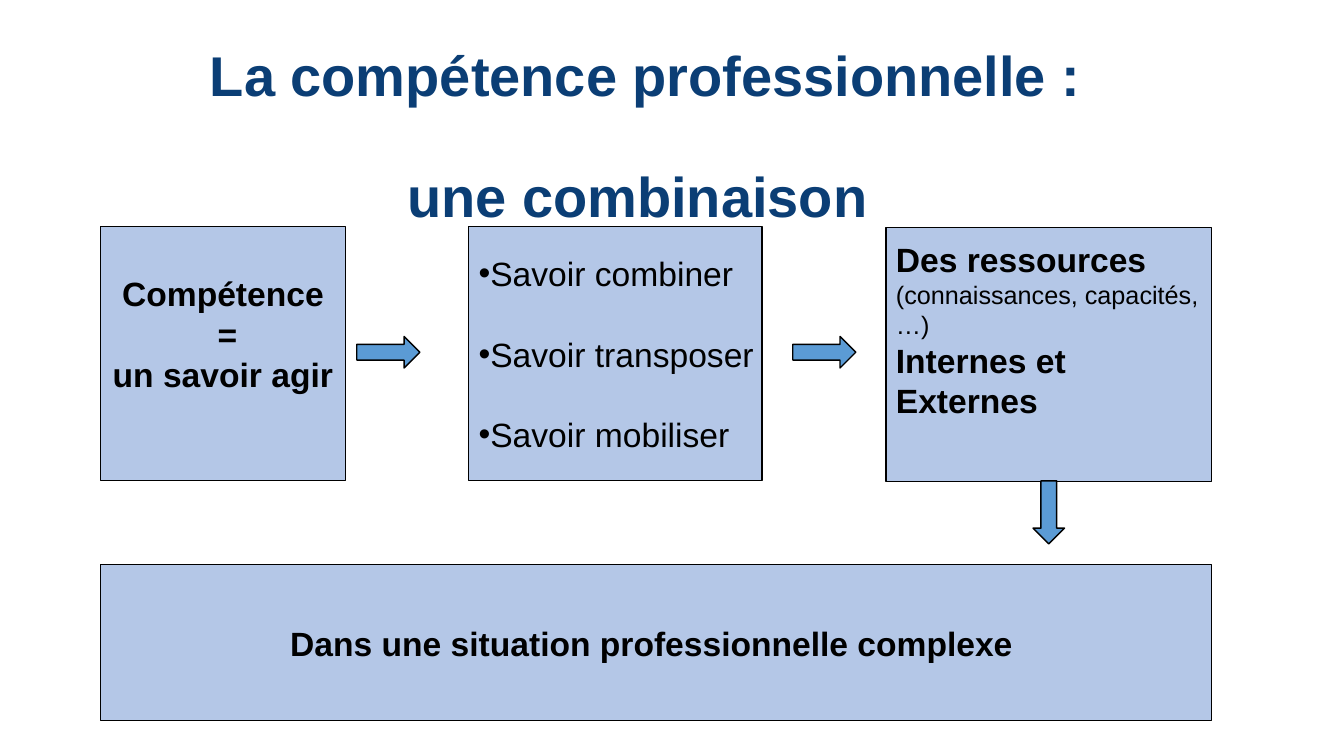
"""Build a slide on professional competence as a combination of skills and resources."""
from lxml import etree
from pptx import Presentation
from pptx.dml.color import RGBColor
from pptx.enum.shapes import MSO_SHAPE
from pptx.enum.text import MSO_ANCHOR, MSO_AUTO_SIZE, PP_ALIGN
from pptx.oxml.ns import qn
from pptx.util import Pt

RECTANGLE, ARROW = MSO_SHAPE.RECTANGLE, MSO_SHAPE.RIGHT_ARROW
TOP, MIDDLE = MSO_ANCHOR.TOP, MSO_ANCHOR.MIDDLE
LEFT, CENTER = PP_ALIGN.LEFT, PP_ALIGN.CENTER

FONT = "Arial"
NAVY, BLACK, PALE_BLUE, BLUE = "0B3E75", "000000", "B4C7E7", "5B9BD5"

TITLE = [("La compétence professionnelle :", 40, True), ("une combinaison ", 40, True)]
COMPETENCE = [("Compétence", 24, True), (" =", 24, True), ("un savoir agir", 24, True)]
SKILLS = [("Savoir combiner", 24, False), ("Savoir transposer", 24, False),
          ("Savoir mobiliser", 24, False)]
RESOURCES = [("Des ressources", 24, True), ("(connaissances, capacités,", 18, False),
             ("…)", 18, False), ("Internes et", 24, True), ("Externes", 24, True)]
SITUATION = [("Dans une situation professionnelle complexe ", 24, True)]

ROW_TOP, ROW_HEIGHT = 162, 181.5
MARGIN, RIGHT_EDGE = 72, 865.4
RESOURCES_LEFT = 632.9
RESOURCES_WIDTH = RIGHT_EDGE - RESOURCES_LEFT
ARROW_LENGTH, ARROW_WIDTH = 45, 22.5
LINE_24 = 28.7


def color(value):
    return RGBColor.from_string(value)


def write(frame, lines, align, ink=BLACK, gap=0, bullet=None):
    frame.text = "\n".join(text for text, _, _ in lines)
    for index, (paragraph, (_, size, bold)) in enumerate(zip(frame.paragraphs, lines)):
        if bullet:
            properties = paragraph._p.get_or_add_pPr()
            properties.set("marL", "0")
            properties.set("indent", "0")
            etree.SubElement(properties, qn("a:buFont")).set("typeface", FONT)
            etree.SubElement(properties, qn("a:buChar")).set("char", bullet)
        paragraph.alignment = align
        if index and gap:
            paragraph.space_before = Pt(gap)
        for run in paragraph.runs:
            run.font.name = FONT
            run.font.size = Pt(size)
            run.font.bold = bold
            run.font.color.rgb = color(ink)


def add_figure(slide, kind, left, top, width, height, fill, line_width):
    figure = slide.shapes.add_shape(kind, Pt(left), Pt(top), Pt(width), Pt(height))
    figure.shadow.inherit = False
    figure.fill.solid()
    figure.fill.fore_color.rgb = color(fill)
    figure.line.color.rgb = color(BLACK)
    figure.line.width = Pt(line_width)
    return figure


def add_box(slide, left, top, width, height, lines, align,
            anchor=MIDDLE, inset_top=3.6, inset_bottom=3.6, gap=0, bullet=None):
    box = add_figure(slide, RECTANGLE, left, top, width, height, PALE_BLUE, 0.75)
    frame = box.text_frame
    frame.word_wrap = False
    frame.vertical_anchor = anchor
    frame.margin_top, frame.margin_bottom = Pt(inset_top), Pt(inset_bottom)
    write(frame, lines, align, gap=gap, bullet=bullet)


def add_arrow(slide, center_x, center_y, rotation):
    arrow = add_figure(slide, ARROW, center_x - ARROW_LENGTH / 2, center_y - ARROW_WIDTH / 2,
                       ARROW_LENGTH, ARROW_WIDTH, BLUE, 1)
    arrow.rotation = rotation


def main():
    deck = Presentation()
    deck.slide_width, deck.slide_height = Pt(960), Pt(540)
    slide = deck.slides.add_slide(deck.slide_layouts[5])

    title = slide.shapes.title
    title.left, title.top, title.width, title.height = Pt(139.7), Pt(46.8), Pt(642.2), Pt(105.1)
    title.text_frame.auto_size = MSO_AUTO_SIZE.NONE
    title.text_frame.word_wrap = True
    title.text_frame.vertical_anchor = MIDDLE
    write(title.text_frame, TITLE, CENTER, ink=NAVY, gap=43)
    for paragraph in title.text_frame.paragraphs:
        paragraph.line_spacing = 0.9

    add_box(slide, MARGIN, ROW_TOP, 174.5, ROW_HEIGHT, COMPETENCE, CENTER,
            inset_bottom=3.6 + LINE_24)
    add_box(slide, 334.8, ROW_TOP, 209.5, ROW_HEIGHT, SKILLS, LEFT, gap=LINE_24, bullet="•")
    add_box(slide, RESOURCES_LEFT, ROW_TOP + 0.5, RESOURCES_WIDTH, ROW_HEIGHT, RESOURCES, LEFT,
            anchor=TOP, inset_top=8.2)
    add_box(slide, MARGIN, 403.2, RIGHT_EDGE - MARGIN, 111.6, SITUATION, CENTER)

    row_bottom = ROW_TOP + ROW_HEIGHT
    resources_center = RESOURCES_LEFT + RESOURCES_WIDTH / 2
    for center_x, center_y, rotation in [
        (277.4, 251.6, 0),
        (resources_center, row_bottom + ARROW_LENGTH / 2, 90),
        (588.8, 251.6, 0),
    ]:
        add_arrow(slide, center_x, center_y, rotation)

    deck.save("out.pptx")


if __name__ == "__main__":
    main()
